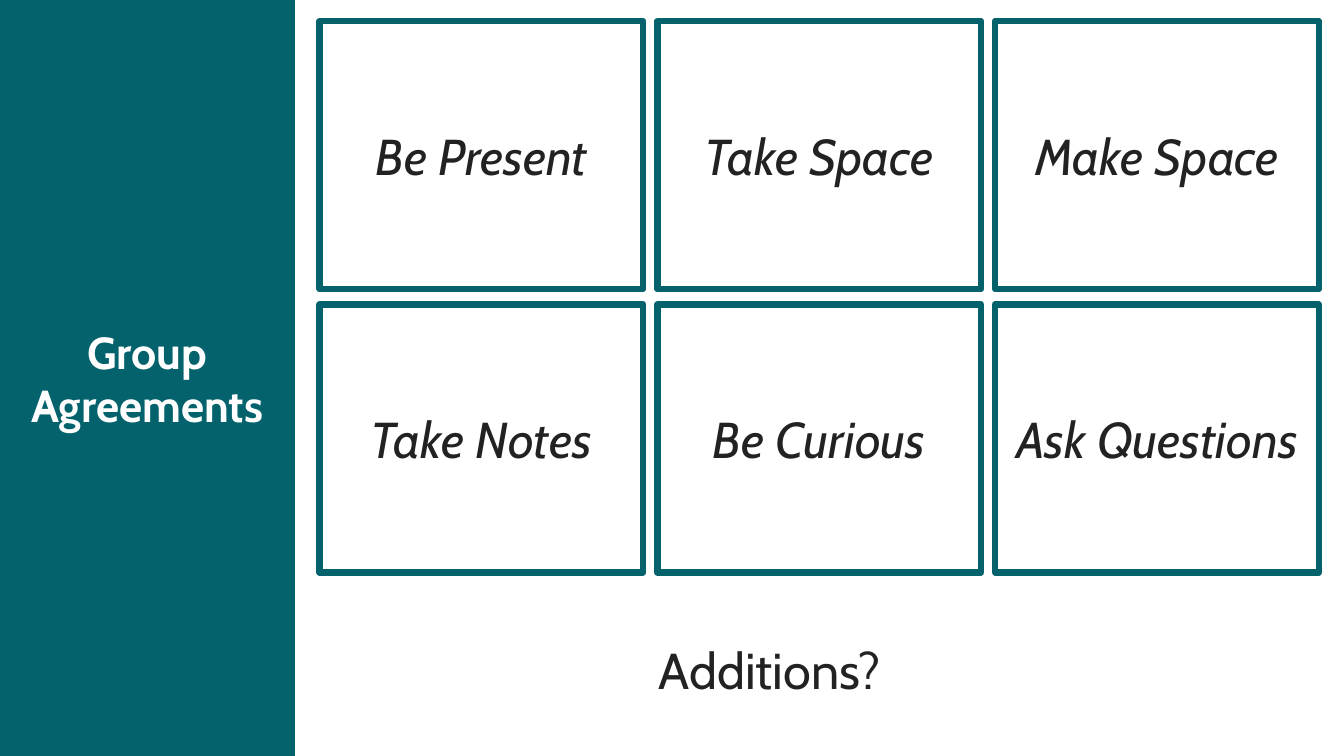
from pptx import Presentation
from pptx.dml.color import RGBColor
from pptx.enum.shapes import MSO_SHAPE
from pptx.enum.text import MSO_ANCHOR, MSO_AUTO_SIZE, PP_ALIGN
from pptx.util import Inches, Pt

TITLE = "Group Agreements"
AGREEMENTS = [
    ["Be Present", "Take Space", "Make Space"],
    ["Take Notes", "Be Curious", "Ask Questions"],
]
CLOSING_PROMPT = "Additions?"

FONT, TEAL, WHITE, INK = "Cabin", "03626B", "FFFFFF", "222222"
SLIDE_W, SLIDE_H = 13.33, 7.5
SIDEBAR_W = 2.92
GRID_LEFT, GRID_TOP = 3.17, 0.21
CARD_W, CARD_H = 3.21, 2.66
COLUMN_STEP, ROW_STEP = CARD_W + 0.14, CARD_H + 0.15
PROMPT_BOX = (3.06, 6.05, 9.15, 1.18)


def color(hex_code):
    return RGBColor.from_string(hex_code)


def paint(shape, fill, line=None, line_width=1):
    shape.fill.solid()
    shape.fill.fore_color.rgb = color(fill)
    if line:
        shape.line.color.rgb = color(line)
        shape.line.width = Pt(line_width)
    else:
        shape.line.fill.background()


def write(shape, text, size=36, ink=INK, bold=False, italic=False):
    frame = shape.text_frame
    frame.text = text
    frame.word_wrap = True
    frame.auto_size = MSO_AUTO_SIZE.NONE
    frame.vertical_anchor = MSO_ANCHOR.MIDDLE
    paragraph = frame.paragraphs[0]
    paragraph.alignment = PP_ALIGN.CENTER
    font = paragraph.runs[0].font
    font.name, font.size, font.bold, font.italic = FONT, Pt(size), bold, italic
    font.color.rgb = color(ink)


def add_box(slide, left, top, width, height):
    box = slide.shapes.add_shape(
        MSO_SHAPE.RECTANGLE, *map(Inches, (left, top, width, height)))
    box.shadow.inherit = False
    return box


def main():
    deck = Presentation()
    deck.slide_width, deck.slide_height = Inches(SLIDE_W), Inches(SLIDE_H)
    slide = deck.slides.add_slide(deck.slide_layouts[5])

    sidebar = slide.shapes.title
    sidebar.left, sidebar.top = 0, 0
    sidebar.width, sidebar.height = Inches(SIDEBAR_W), Inches(SLIDE_H)
    paint(sidebar, TEAL, line=TEAL)
    write(sidebar, TITLE, size=32, ink=WHITE, bold=True)

    for row, agreements in enumerate(AGREEMENTS):
        for column, agreement in enumerate(agreements):
            card = add_box(slide, GRID_LEFT + column * COLUMN_STEP,
                           GRID_TOP + row * ROW_STEP, CARD_W, CARD_H)
            paint(card, WHITE, line=TEAL, line_width=4.5)
            write(card, agreement, italic=True)

    prompt = add_box(slide, *PROMPT_BOX)
    paint(prompt, WHITE)
    write(prompt, CLOSING_PROMPT)

    deck.save("out.pptx")


if __name__ == "__main__":
    main()
